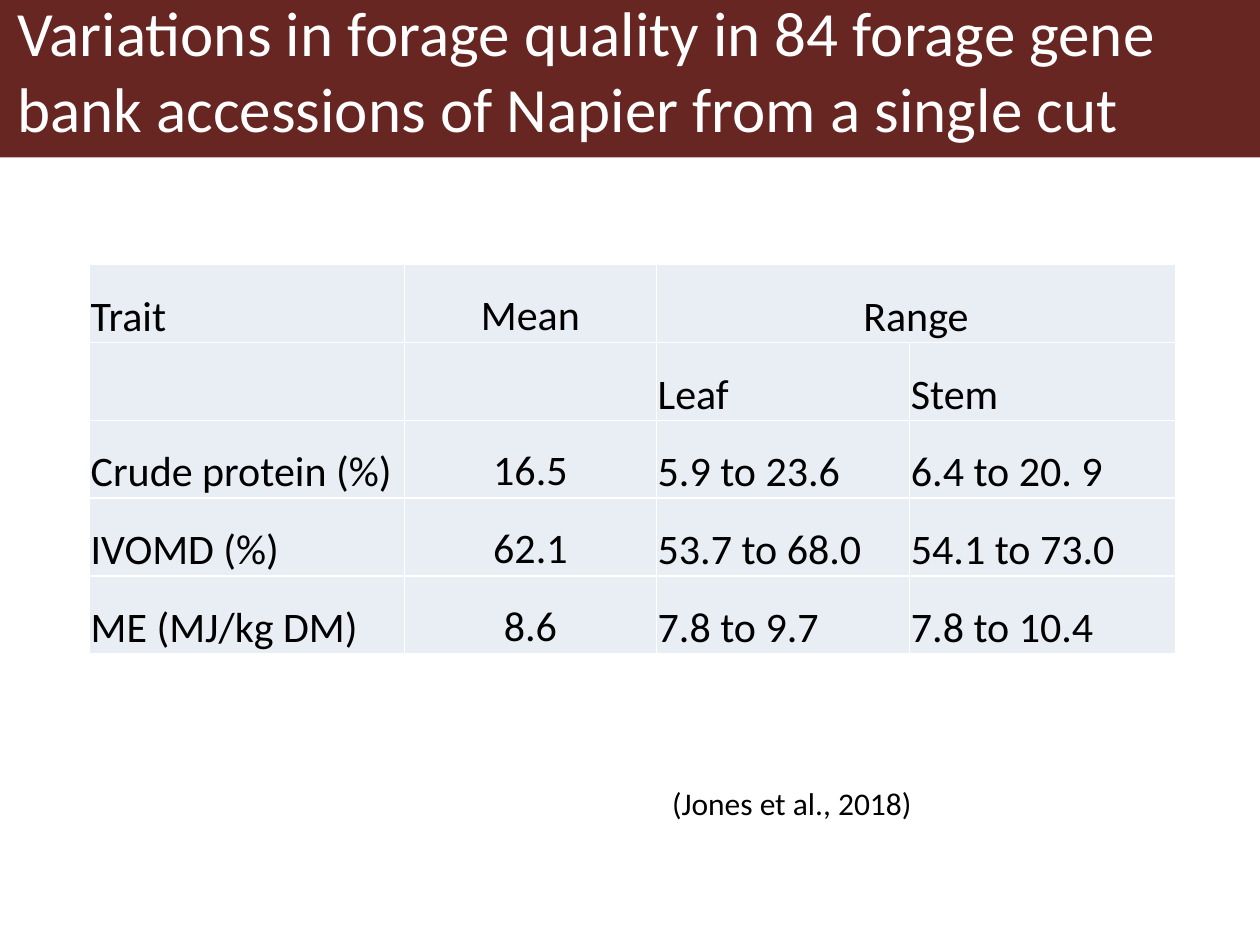
from lxml import etree
from pptx import Presentation
from pptx import util as u
from pptx.dml.color import RGBColor
from pptx.enum import shapes, text
from pptx.oxml.ns import qn

MAROON, WHITE, BLACK, PALE = "682622", "FFFFFF", "000000", "E9EDF4"
TITLE = ("Variations in forage quality in 84 forage gene bank accessions "
         "of Napier from a single cut")
TRAITS = [
    ["Trait", "Mean", "Range", ""],
    ["", "", "Leaf", "Stem"],
    ["Crude protein (%)", "16.5", "5.9 to 23.6", "6.4 to 20. 9"],
    ["IVOMD (%)", "62.1", "53.7 to 68.0", "54.1 to 73.0"],
    ["ME (MJ/kg DM)", "8.6", "7.8 to 9.7", "7.8 to 10.4"],
]
COLUMN_WIDTHS = [2.5, 2, 2.01, 2.11]
MEAN_COLUMN = 1
CENTRE, JUSTIFY = text.PP_ALIGN.CENTER, text.PP_ALIGN.JUSTIFY


def colour(value):
    return RGBColor.from_string(value)


def inches(box):
    return [u.Inches(length) for length in box]


def set_values(target, values):
    for name, value in values.items():
        setattr(target, name, value)


def write(frame, words, size, ink, **paragraph_format):
    paragraph = frame.paragraphs[0]
    set_values(paragraph, paragraph_format)
    run = paragraph.add_run()
    run.text = words
    set_values(run.font, {"name": "Calibri", "size": u.Pt(size)})
    run.font.color.rgb = colour(ink)


def add_text(slide, box, words, size, ink, wrap, **paragraph_format):
    frame = slide.shapes.add_textbox(*inches(box)).text_frame
    set_values(frame, {"word_wrap": wrap, "vertical_anchor": text.MSO_ANCHOR.TOP})
    write(frame, words, size, ink, **paragraph_format)


def add_header(slide, box):
    left, top, width, height = box
    band = slide.shapes.add_shape(shapes.MSO_SHAPE.RECTANGLE, *inches(box))
    band.shadow.inherit = False
    band.fill.solid()
    band.fill.fore_color.rgb = colour(MAROON)
    band.line.fill.background()
    add_text(slide, (left + 0.04, top - 0.1, width, 1.17), TITLE, 36, WHITE, True)


def add_borders(cell, ink, points):
    properties = cell._tc.get_or_add_tcPr()
    for side in ("a:lnL", "a:lnR", "a:lnT", "a:lnB"):
        line = etree.SubElement(properties, qn(side), w=str(u.Pt(points)))
        fill = etree.SubElement(line, qn("a:solidFill"))
        etree.SubElement(fill, qn("a:srgbClr"), val=ink)


def format_cell(cell, words, is_mean, alignment):
    add_borders(cell, WHITE, 1)
    cell.fill.solid()
    cell.fill.fore_color.rgb = colour(PALE)
    if not words:
        return
    margin = u.Inches(0 if is_mean else 0.01)
    anchor = text.MSO_ANCHOR.TOP if is_mean else text.MSO_ANCHOR.BOTTOM
    set_values(cell, {"margin_left": margin, "margin_right": margin,
                      "margin_top": margin, "margin_bottom": 0,
                      "vertical_anchor": anchor})
    write(cell.text_frame, words, 24, BLACK, alignment=alignment,
          line_spacing=1.5, space_after=u.Pt(10))


def add_trait_table(slide, box):
    frame = slide.shapes.add_table(len(TRAITS), len(COLUMN_WIDTHS), *inches(box))
    table = frame.table
    set_values(table, {"first_row": False, "horz_banding": False})
    for column, width in zip(table.columns, COLUMN_WIDTHS):
        column.width = u.Inches(width)
    for row in table.rows:
        row.height = u.Inches(box[3] / len(TRAITS))
    # "Range" heads both the leaf and the stem column
    table.cell(0, 2).merge(table.cell(0, 3))
    for row_index, row in enumerate(TRAITS):
        for column_index, words in enumerate(row):
            cell = table.cell(row_index, column_index)
            is_mean = column_index == MEAN_COLUMN
            centred = is_mean or cell.is_merge_origin
            format_cell(cell, words, is_mean, CENTRE if centred else JUSTIFY)


def add_citation(slide, box):
    add_text(slide, box, "(Jones et al., 2018)", 18, BLACK, False,
             alignment=CENTRE, line_spacing=u.Pt(32))


def main():
    presentation = Presentation()
    set_values(presentation, {"slide_width": u.Inches(10),
                              "slide_height": u.Inches(7.5)})
    slide = presentation.slides.add_slide(presentation.slide_layouts[6])
    add_header(slide, (0, 0, 10, 1.25))
    add_trait_table(slide, (0.71, 2.1, sum(COLUMN_WIDTHS), 3.09))
    add_citation(slide, (5.22, 6.03, 2.13, 0.55))
    presentation.save("out.pptx")


if __name__ == "__main__":
    main()
